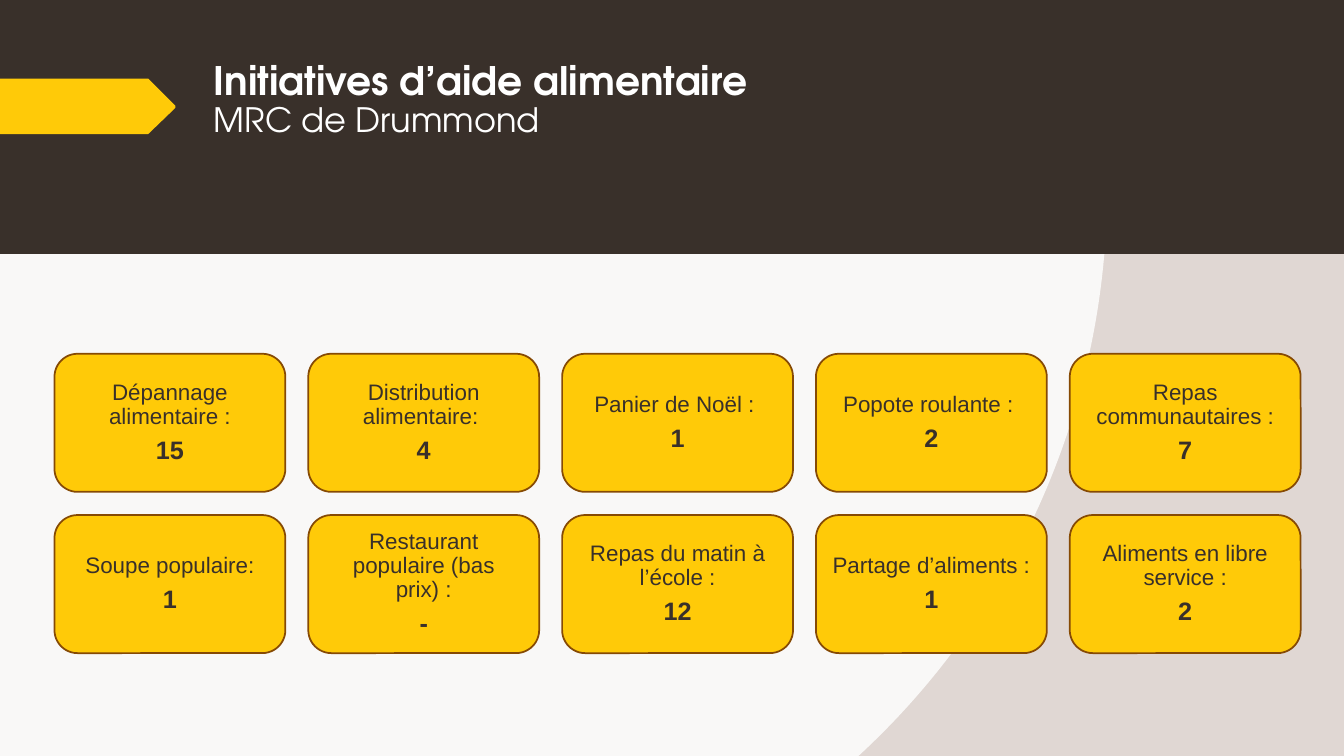
import pptx
import pptx.util
import pptx.oxml
import pptx.oxml.ns
import pptx.dml.color
import pptx.enum.shapes
import pptx.enum.text

Inches, Pt = pptx.util.Inches, pptx.util.Pt
SHAPE = pptx.enum.shapes.MSO_SHAPE
ALIGN = pptx.enum.text.PP_ALIGN
ANCHOR = pptx.enum.text.MSO_ANCHOR

COLORS = {"dark": "39302A", "gold": "FFCA08", "edge": "864A04",
          "white": "FFFFFF", "pale": "F9F8F7", "taupe": "E0D7D3"}

TILES = [
    ("Dépannage alimentaire :", "15"),
    ("Distribution alimentaire: ", "4"),
    ("Panier de Noël : ", "1"),
    ("Popote roulante : ", "2"),
    ("Repas communautaires :", "7"),
    ("Soupe populaire:", "1"),
    ("Restaurant populaire (bas prix) :", "-"),
    ("Repas du matin à l’école :", "12"),
    ("Partage d’aliments :", "1"),
    ("Aliments en libre service :", "2"),
]


def color(name):
    return pptx.dml.color.RGBColor.from_string(COLORS[name])


def paint(shape, fill, line=None):
    shape.shadow.inherit = False
    shape.fill.solid()
    shape.fill.fore_color.rgb = color(fill)
    if line:
        shape.line.color.rgb = color(line)
        shape.line.width = Pt(1.25)
    else:
        shape.line.fill.background()


def backdrop(slide):
    # Radial gradient with a hard edge, centred in the upper left quarter
    slide.background.fill.solid()
    props = slide.background._cSld.bg.bgPr
    stops = "".join(
        f'<a:gs pos="100000"><a:srgbClr val="{COLORS[name]}"/></a:gs>'
        for name in ("pale", "taupe"))
    grad = pptx.oxml.parse_xml(
        f'<a:gradFill {pptx.oxml.ns.nsdecls("a")} rotWithShape="1">'
        f'<a:gsLst>{stops}</a:gsLst><a:path path="circle">'
        '<a:fillToRect l="50000" t="50000" r="100000" b="100000"/>'
        '</a:path></a:gradFill>')
    props.replace(props[0], grad)


def header(slide, x, y, w, h):
    # Dark band
    band = slide.shapes.add_shape(
        SHAPE.RECTANGLE, Inches(x), Inches(y), Inches(w), Inches(h))
    paint(band, "dark")

    # Arrow tab on the left edge
    top, mid, low = y + 0.78, y + 1.06, y + 1.33
    points = [(x + 1.47, top), (x + 1.74, mid - 0.01), (x + 1.74, mid + 0.01),
              (x + 1.47, low), (x, low)]
    build = slide.shapes.build_freeform(
        Inches(x), Inches(top), scale=1.0)
    build.add_line_segments([(Inches(a), Inches(b)) for a, b in points])
    tab = build.convert_to_shape()
    paint(tab, "gold")

    # Title, brought in front of the band
    title = slide.shapes.title
    title.left, title.top = Inches(x + 2.02), Inches(y + 0.56)
    title.width, title.height = Inches(10.26), Inches(1.59)
    tab._element.addnext(title._element)
    frame = title.text_frame
    frame.word_wrap = True
    frame.auto_size = pptx.enum.text.MSO_AUTO_SIZE.NONE
    frame.vertical_anchor = ANCHOR.TOP
    para = frame.paragraphs[0]
    para.text = "Initiatives d’aide alimentaire\vMRC de Drummond"
    para.alignment = ALIGN.LEFT
    para.line_spacing = 0.9
    para.font.name = "TeX Gyre Adventor"
    para.font.color.rgb = color("white")
    for run, size, bold in zip(para.runs, (28, 24), (True, False)):
        run.font.name = "TeX Gyre Adventor"
        run.font.color.rgb = color("white")
        run.font.size, run.font.bold = Pt(size), bold


def tile(slide, x, y, w, h, label, count):
    box = slide.shapes.add_shape(
        SHAPE.ROUNDED_RECTANGLE, Inches(x), Inches(y), Inches(w), Inches(h))
    paint(box, "gold", "edge")
    frame = box.text_frame
    frame.word_wrap = True
    frame.vertical_anchor = ANCHOR.MIDDLE
    frame.margin_left = frame.margin_right = Inches(0.07)
    frame.margin_top = frame.margin_bottom = Inches(0.07)
    paras = frame.paragraphs[0], frame.add_paragraph()
    for para, text, size, bold in zip(
            paras, (label, count), (16, 18), (False, True)):
        para.text = text
        para.alignment = ALIGN.CENTER
        para.line_spacing = 0.9
        para.space_after = Pt(6)
        para.font.name = "Arial"
        para.font.size, para.font.bold = Pt(size), bold
        para.font.color.rgb = color("dark")


def grid(slide, x, y, w, h, cols=5, rows=2):
    # Equal tiles spread over the box
    wide, high = 2.29, 1.37
    across = (w - wide) / (cols - 1)
    down = (h - high) / (rows - 1)
    for i, (label, count) in enumerate(TILES):
        row, col = divmod(i, cols)
        tile(slide, x + col * across, y + row * down, wide, high, label, count)


def main():
    deck = pptx.Presentation()
    deck.slide_width, deck.slide_height = Inches(13.33), Inches(7.5)
    slide = deck.slides.add_slide(deck.slide_layouts[5])
    backdrop(slide)
    header(slide, 0, 0, 13.33, 2.52)
    grid(slide, 0.54, 3.51, 12.36, 2.97)
    deck.save("out.pptx")


if __name__ == "__main__":
    main()
